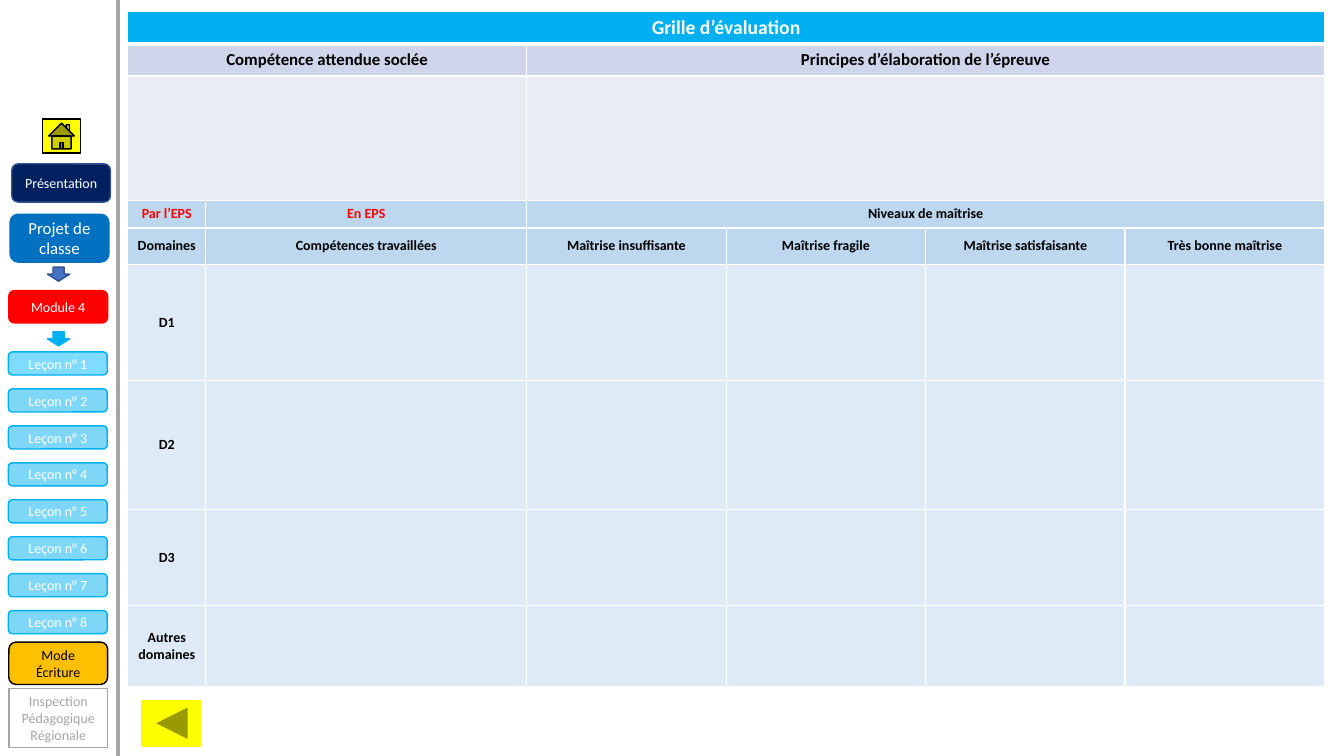
from pptx import Presentation
from pptx.dml.color import RGBColor
from pptx.enum.shapes import MSO_CONNECTOR, MSO_SHAPE
from pptx.enum.text import MSO_ANCHOR, PP_ALIGN
from pptx.oxml import parse_xml
from pptx.oxml.ns import nsdecls, qn
from pptx.oxml.xmlchemy import OxmlElement
from pptx.util import Inches, Pt

COLUMNS, ROWS = 160, 90
WHITE, BLACK, GREY, RED = "FFFFFF", "000000", "A6A6A6", "FF0000"
YELLOW, SKY, NAVY, BLUE = "FFFF00", "00B0F0", "002060", "0070C0"
HEADING, BLANK, LEVEL, BODY = "CFD5EA", "E9EBF5", "BDD7EE", "DEEBF7"


def rgb(value):
    return RGBColor.from_string(value)


class SlideBuilder:
    """Holds the font and the slide; lengths are columns and rows of the grid."""

    def __init__(self, prs, font="Calibri"):
        self.s = prs.slides.add_slide(prs.slide_layouts[6])
        self.font = font
        self.column = prs.slide_width / COLUMNS
        self.row = prs.slide_height / ROWS

    def box(self, x, y, w, h):
        return (round(x * self.column), round(y * self.row),
                round(w * self.column), round(h * self.row))

    def label(self, tf, text, size, color, bold=False):
        tf.word_wrap = True
        p = tf.paragraphs[0]
        p.alignment = PP_ALIGN.CENTER
        r = p.add_run()
        r.text = text
        style = {"name": self.font, "size": Pt(size), "bold": bold}
        for name, value in style.items():
            setattr(r.font, name, value)
        r.font.color.rgb = rgb(color)

    def shape(self, kind, place, fill, line, text="", size=10, color=WHITE, alpha=None):
        sp = self.s.shapes.add_shape(kind, *self.box(*place))
        sp.shadow.inherit = False
        sp.fill.solid()
        sp.fill.fore_color.rgb = rgb(fill)
        sp.line.color.rgb = rgb(line)
        sp.line.width = Pt(1)
        if alpha:
            opacity = OxmlElement("a:alpha")
            opacity.set("val", str(alpha * 1000))
            sp._element.spPr.find(qn("a:solidFill"))[0].append(opacity)
        if text:
            tf = sp.text_frame
            layout = {"margin_top": 0, "margin_bottom": 0,
                      "vertical_anchor": MSO_ANCHOR.MIDDLE}
            for name, value in layout.items():
                setattr(tf, name, value)
            self.label(tf, text, size, color)

    def vertical_line(self, x, color, width):
        left, top, _, height = self.box(x, 0, 0, ROWS)
        line = self.s.shapes.add_connector(MSO_CONNECTOR.STRAIGHT, left, top, left, height)
        line.line.color.rgb = rgb(color)
        line.line.width = Pt(width)
        line._element.spPr.append(OxmlElement("a:effectLst"))

    def table(self, x, y, widths, heights):
        place = self.box(x, y, sum(widths), sum(heights))
        table = self.s.shapes.add_table(len(heights), len(widths), *place).table
        table.first_row = table.horz_banding = False
        for column, width in zip(table.columns, widths):
            column.width = round(width * self.column)
        for row, height in zip(table.rows, heights):
            row.height = round(height * self.row)
        return table

    def cell(self, cell, fill, text="", size=10, color=BLACK):
        layout = {"margin_left": Inches(0.05), "margin_right": Inches(0.05),
                  "margin_top": Inches(0.03), "margin_bottom": Inches(0.03),
                  "vertical_anchor": MSO_ANCHOR.MIDDLE}
        for name, value in layout.items():
            setattr(cell, name, value)
        cell.fill.solid()
        cell.fill.fore_color.rgb = rgb(fill)
        if text:
            self.label(cell.text_frame, text, size, color, bold=True)

    def borders(self, cell, **widths):
        """Draw white borders, 1 point wide unless a side is named."""
        tc_pr = cell._tc.get_or_add_tcPr()
        for position, side in enumerate("LRTB"):
            width = Pt(widths.get(side, 1))
            tc_pr.insert(position, parse_xml(
                f'<a:ln{side} {nsdecls("a")} w="{width}"><a:solidFill>'
                f'<a:srgbClr val="{WHITE}"/></a:solidFill></a:ln{side}>'))


def add_sidebar(b):
    x, width = 1.05, 11.76
    button, arrow = MSO_SHAPE.ROUNDED_RECTANGLE, MSO_SHAPE.DOWN_ARROW
    b.vertical_line(14.04, GREY, 3)
    b.shape(MSO_SHAPE.RECTANGLE, (x, 82, width, 7), WHITE, GREY,
            "Inspection Pédagogique Régionale", color=GREY)
    b.shape(MSO_SHAPE.ACTION_BUTTON_HOME, (5.04, 14.16, 4.56, 4.08), YELLOW, BLACK)
    b.shape(button, (1.4, 19.5, width, 4.56), NAVY, "325491", "Présentation")
    b.shape(button, (1.2, 25.5, width, 5.7), BLUE, BLUE, "Projet de classe", 12)
    b.shape(arrow, (5.65, 31.8, 2.64, 1.68), "4472C4", "325491")
    b.shape(button, (x, 34.6, width, 3.84), RED, RED, "Module 4")
    b.shape(arrow, (5.65, 39.5, 2.64, 1.68), SKY, SKY)
    for i in range(8):
        b.shape(button, (1, 41.9 + 4.4 * i, width, 2.75), SKY if i else "00BAFF", SKY,
                f"Leçon n° {i + 1}", alpha=50)
    b.shape(button, (x, 76.44, width, 5.04), "FFC000", BLACK, "Mode Écriture", color=BLACK)


def add_evaluation_grid(b):
    # Each row: fill, text size, text colour, then (text, columns spanned).
    rows = [
        (SKY, 14, WHITE, [("Grille d’évaluation", 6)]),
        (HEADING, 12, BLACK, [("Compétence attendue soclée", 2),
                              ("Principes d’élaboration de l’épreuve", 4)]),
        (BLANK, 12, BLACK, [("", 2), ("", 4)]),
        (LEVEL, 10, RED, [("Par l’EPS", 1), ("En EPS", 1), ("Niveaux de maîtrise", 4)]),
        (LEVEL, 10, BLACK, [(text, 1) for text in (
            "Domaines", "Compétences travaillées", "Maîtrise insuffisante",
            "Maîtrise fragile", "Maîtrise satisfaisante", "Très bonne maîtrise")]),
    ]
    for domain in ("D1", "D2", "D3", "Autres domaines"):
        rows.append((BODY, 10, BLACK, [(domain, 1)] + [("", 1)] * 5))

    widths = [9.3, 38.2] + [23.75] * 4
    heights = [3.95, 3.8, 14.8, 3.3, 4.3, 13.85, 15.4, 11.4, 9.7]
    table = b.table(15.2, 1.3, widths, heights)
    thick = {0: {"B": 3}, 1: {"T": 3}}
    for i, (fill, size, color, entries) in enumerate(rows):
        j = 0
        for text, span in entries:
            cell = table.cell(i, j)
            if span > 1:
                cell.merge(table.cell(i, j + span - 1))
            shade = BLACK if text == "Niveaux de maîtrise" else color
            b.cell(cell, fill, text, size, shade)
            for k in range(j, j + span):
                b.borders(table.cell(i, k), **thick.get(i, {}))
            j += span


def main():
    prs = Presentation()
    prs.slide_width, prs.slide_height = Inches(13.33), Inches(7.5)
    b = SlideBuilder(prs)
    add_sidebar(b)
    b.shape(MSO_SHAPE.ACTION_BUTTON_BACK_OR_PREVIOUS, (16.92, 83.4, 6.96, 5.4),
            YELLOW, YELLOW)
    add_evaluation_grid(b)
    prs.save("out.pptx")


if __name__ == "__main__":
    main()
